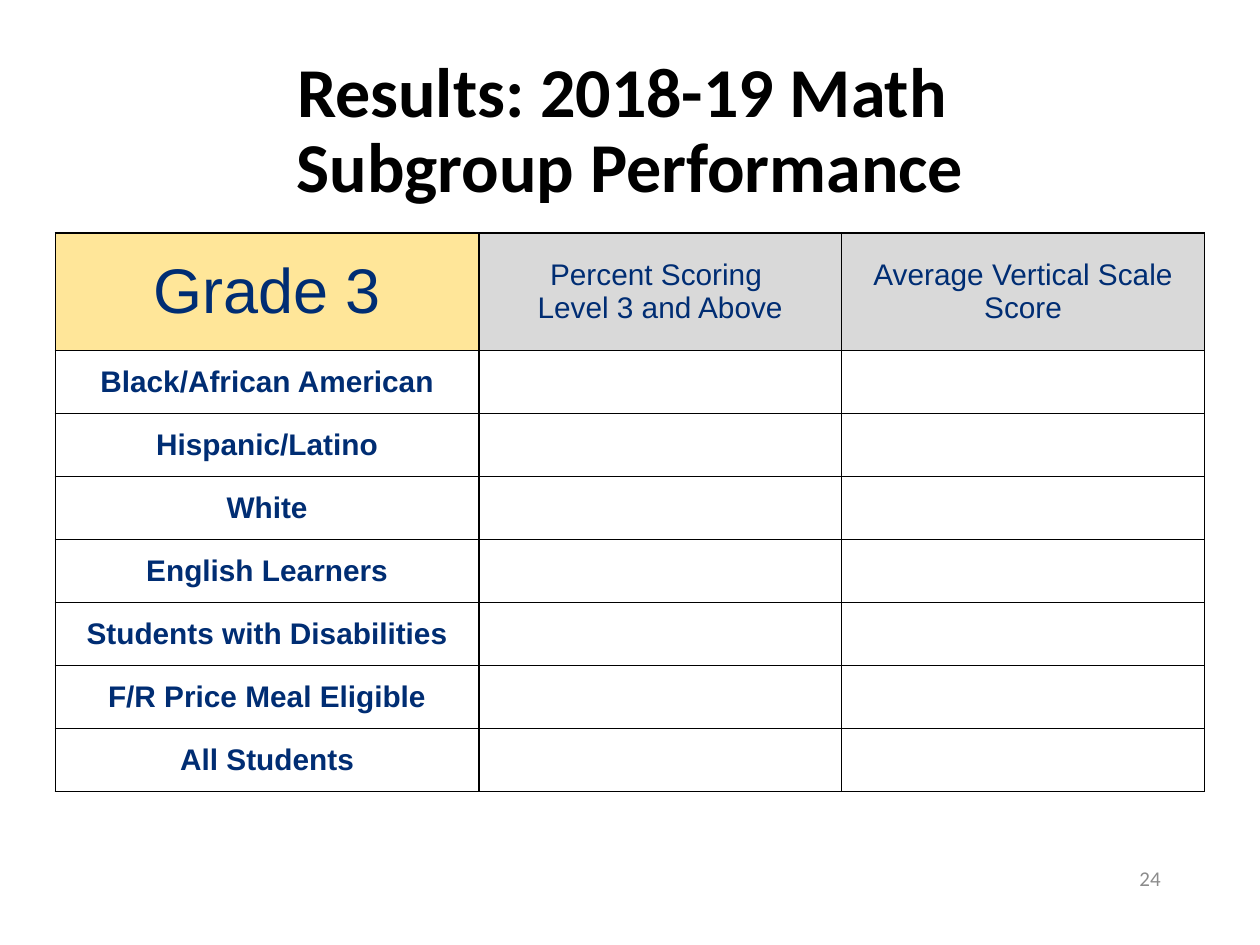
from lxml import etree
from pptx import Presentation
from pptx.dml.color import RGBColor
from pptx.enum.text import MSO_ANCHOR, PP_ALIGN
from pptx.oxml.ns import qn
from pptx.util import Inches, Pt

CENTER, RIGHT = PP_ALIGN.CENTER, PP_ALIGN.RIGHT
MIDDLE = MSO_ANCHOR.MIDDLE

BLACK = RGBColor(0x00, 0x00, 0x00)
WHITE = RGBColor(0xFF, 0xFF, 0xFF)
NAVY = RGBColor(0x00, 0x2D, 0x73)
YELLOW = RGBColor(0xFF, 0xE6, 0x99)
LIGHT_GRAY = RGBColor(0xD9, 0xD9, 0xD9)
NUMBER_GRAY = RGBColor(0x8C, 0x8C, 0x8C)

TITLE_LINES = ["Results: 2018-19 Math ", "Subgroup Performance"]
PAGE_NUMBER = "24"
# Header cells: paragraphs, text size, fill
HEADERS = [
    (["Grade 3"], 36, YELLOW),
    (["Percent Scoring ", "Level 3 and Above"], 17, LIGHT_GRAY),
    (["Average Vertical Scale Score"], 17, LIGHT_GRAY),
]
SUBGROUPS = [
    "Black/African American",
    "Hispanic/Latino",
    "White",
    "English Learners",
    "Students with Disabilities",
    "F/R Price Meal Eligible",
    "All Students",
]
COLUMN_WIDTHS = [3.36, 2.88, 2.88]
HEADER_HEIGHT, ROW_HEIGHT = 0.93, 0.5
BORDER_WIDTH = Pt(1)


def add_run(paragraph, text, font_name, size, color, bold=False):
    run = paragraph.add_run()
    run.text = text
    run.font.name = font_name
    run.font.size = Pt(size)
    run.font.bold = bold
    run.font.color.rgb = color


def style_cell(cell, fill):
    """Give the cell black borders on all sides and a solid fill."""
    properties = cell._tc.get_or_add_tcPr()
    for side in ("a:lnL", "a:lnR", "a:lnT", "a:lnB"):
        line = etree.SubElement(properties, qn(side), w=str(BORDER_WIDTH))
        line_fill = etree.SubElement(line, qn("a:solidFill"))
        etree.SubElement(line_fill, qn("a:srgbClr"), val=str(BLACK))
    cell.fill.solid()
    cell.fill.fore_color.rgb = fill
    cell.vertical_anchor = MIDDLE


def write_cell(cell, lines, size, bold=False):
    frame = cell.text_frame
    for index, text in enumerate(lines):
        paragraph = frame.add_paragraph() if index else frame.paragraphs[0]
        paragraph.alignment = CENTER
        add_run(paragraph, text, "Arial", size, NAVY, bold)


def add_title(slide):
    title = slide.shapes.title
    title.left, title.top = Inches(0), Inches(0.4)
    title.width, title.height = Inches(10), Inches(1.3)
    title.text_frame.vertical_anchor = MIDDLE
    paragraph = title.text_frame.paragraphs[0]
    paragraph.alignment = CENTER
    paragraph.line_spacing = 0.9
    for index, text in enumerate(TITLE_LINES):
        if index:
            paragraph.add_line_break()
        add_run(paragraph, text, "Calibri", 40, BLACK, bold=True)


def add_results_table(slide):
    height = HEADER_HEIGHT + ROW_HEIGHT * len(SUBGROUPS)
    table = slide.shapes.add_table(
        len(SUBGROUPS) + 1, len(HEADERS), Inches(0.44), Inches(1.85),
        Inches(sum(COLUMN_WIDTHS)), Inches(height)).table
    table.first_row = table.horz_banding = False
    for column, width in zip(table.columns, COLUMN_WIDTHS):
        column.width = Inches(width)
    for index, row in enumerate(table.rows):
        row.height = Inches(ROW_HEIGHT if index else HEADER_HEIGHT)
        for cell, (lines, size, fill) in zip(row.cells, HEADERS):
            style_cell(cell, WHITE if index else fill)
            if index == 0:
                write_cell(cell, lines, size)
    for index, subgroup in enumerate(SUBGROUPS, start=1):
        write_cell(table.cell(index, 0), [subgroup], 17, bold=True)


def add_page_number(slide):
    box = slide.shapes.add_textbox(
        Inches(7.06), Inches(6.77), Inches(2.25), Inches(0.4))
    box.text_frame.word_wrap = True
    box.text_frame.vertical_anchor = MIDDLE
    paragraph = box.text_frame.paragraphs[0]
    paragraph.alignment = RIGHT
    add_run(paragraph, PAGE_NUMBER, "Calibri", 12, NUMBER_GRAY)


def main():
    presentation = Presentation()
    presentation.slide_width, presentation.slide_height = Inches(10), Inches(7.5)
    slide = presentation.slides.add_slide(presentation.slide_layouts[5])
    add_title(slide)
    add_page_number(slide)
    add_results_table(slide)
    presentation.save("out.pptx")


if __name__ == "__main__":
    main()
